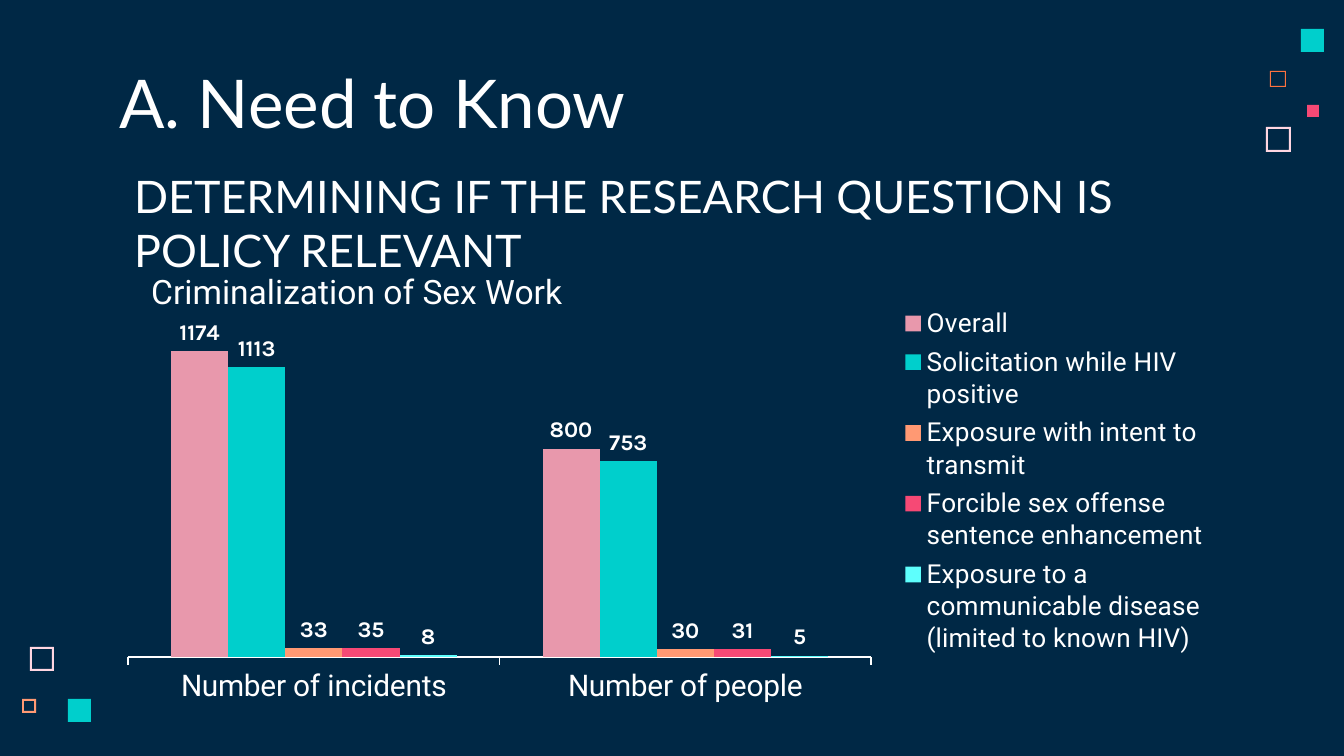
from dataclasses import dataclass

from lxml.etree import SubElement
from pptx import Presentation
from pptx.chart.data import CategoryChartData
from pptx.dml.color import RGBColor as Rgb
from pptx.enum.chart import XL_CHART_TYPE as ChartType
from pptx.enum.chart import XL_LABEL_POSITION as LabelPosition
from pptx.enum.chart import XL_LEGEND_POSITION as LegendPosition
from pptx.enum.chart import XL_TICK_MARK as TickMark
from pptx.enum.shapes import MSO_SHAPE as Shape
from pptx.enum.text import MSO_ANCHOR as Anchor
from pptx.enum.text import MSO_AUTO_SIZE as AutoSize
from pptx.enum.text import PP_ALIGN as Align
from pptx.oxml.ns import qn
from pptx.util import Pt

PX = 914400 / 134.4


@dataclass(frozen=True)
class Theme:
    navy: Rgb = Rgb.from_string("002845")
    white: Rgb = Rgb.from_string("FFFFFF")
    blush: Rgb = Rgb.from_string("FFD6E1")
    orange: Rgb = Rgb.from_string("FC723F")
    teal: Rgb = Rgb.from_string("00CFCC")
    peach: Rgb = Rgb.from_string("FF9973")
    pink: Rgb = Rgb.from_string("F64975")
    rose: Rgb = Rgb.from_string("E898AC")
    aqua: Rgb = Rgb.from_string("5EFFFD")
    title_size: int = 36
    subtitle_size: int = 24
    heading_size: int = 18
    axis_size: int = 16
    legend_size: int = 14
    label_size: int = 12


theme = Theme()


def write_text(box, bounds, words, name, size, anchor=Anchor.TOP):
    box.left, box.top, box.width, box.height = [round(n * PX) for n in bounds]
    frame = box.text_frame
    frame.word_wrap = True
    frame.auto_size = AutoSize.NONE
    frame.vertical_anchor = anchor
    frame.margin_left = frame.margin_right = Pt(7.2)
    frame.margin_top = frame.margin_bottom = Pt(7.2)
    para = frame.paragraphs[0]
    para.alignment = Align.LEFT
    span = para.add_run()
    span.text = words
    span.font.name = name
    span.font.size = Pt(size)
    span.font.color.rgb = theme.white


def place_in_chart(element, index, **fractions):
    """Give a plot area or legend a fixed place, in fractions of the chart."""
    for old in element.findall(qn("c:layout")):
        element.remove(old)
    layout = SubElement(element, qn("c:layout"))
    element.insert(index, layout)
    manual = SubElement(layout, qn("c:manualLayout"))
    if element.tag == qn("c:plotArea"):
        SubElement(manual, qn("c:layoutTarget"), val="inner")
    for mode in ("xMode", "yMode"):
        SubElement(manual, qn(f"c:{mode}"), val="edge")
    for key, value in fractions.items():
        SubElement(manual, qn(f"c:{key}"), val=str(value))


deck = Presentation()
deck.slide_width = round(1344 * PX)
deck.slide_height = round(756 * PX)
page = deck.slides.add_slide(deck.slide_layouts[5])
page.background.fill.solid()
page.background.fill.fore_color.rgb = theme.navy

# Corner squares: left, top, side, frame thickness (0 is solid), colour
squares = [
    (1266, 127, 25, 2, theme.blush),
    (1270, 71, 16, 1, theme.orange),
    (1301, 29, 23, 0, theme.teal),
    (22, 699, 14, 2, theme.peach),
    (1307, 105, 12, 0, theme.pink),
    (30, 647, 24, 2, theme.blush),
    (68, 699, 23, 0, theme.teal),
]
for left, top, side, thickness, color in squares:
    kind = Shape.FRAME if thickness else Shape.RECTANGLE
    square = page.shapes.add_shape(
        kind, *[round(n * PX) for n in (left, top, side, side)])
    if thickness:
        square.adjustments[0] = thickness / side
    square.shadow.inherit = False
    square.fill.solid()
    square.fill.fore_color.rgb = color
    square.line.fill.background()

write_text(page.shapes.title, (106, 48, 1133, 85), "A. Need to Know",
           "Lato", theme.title_size)
write_text(page.shapes.add_textbox(0, 0, 0, 0), (121, 187, 1117, 71),
           "DETERMINING IF THE RESEARCH QUESTION IS POLICY RELEVANT",
           "Lato", theme.subtitle_size, Anchor.MIDDLE)
write_text(page.shapes.add_textbox(0, 0, 0, 0), (138, 257, 1007, 75),
           "Criminalization of Sex Work", "Roboto", theme.heading_size)

charges = [
    ("Overall", (1174, 800), theme.rose),
    ("Solicitation while HIV positive", (1113, 753), theme.teal),
    ("Exposure with intent to transmit", (33, 30), theme.peach),
    ("Forcible sex offense sentence enhancement", (35, 31), theme.pink),
    ("Exposure to a communicable disease (limited to known HIV)", (8, 5),
     theme.aqua),
]
chart_data = CategoryChartData()
chart_data.categories = ["Number of incidents", "Number of people"]
for name, values, color in charges:
    chart_data.add_series(name, values)
chart = page.shapes.add_chart(
    ChartType.COLUMN_CLUSTERED,
    *[round(n * PX) for n in (106, 284, 1109, 429)], chart_data).chart
chart.has_title = False
chart.has_legend = True
chart.legend.position = LegendPosition.RIGHT
chart.legend.include_in_layout = False

category_axis = chart.category_axis
category_axis.major_tick_mark = TickMark.OUTSIDE
category_axis.format.line.color.rgb = theme.white
category_axis.format.line.width = Pt(0.75)
value_axis = chart.value_axis
value_axis.visible = False
value_axis.has_major_gridlines = False
value_axis.minimum_scale = 0
value_axis.maximum_scale = 1400

plot = chart.plots[0]
plot.gap_width = 150
plot.overlap = 0
plot.vary_by_categories = False
fonts = [
    (chart.font, "Arial", theme.heading_size),
    (category_axis.tick_labels.font, "Roboto", theme.axis_size),
    (chart.legend.font, "Roboto", theme.legend_size),
]
for series, (name, values, color) in zip(plot.series, charges):
    series.format.fill.solid()
    series.format.fill.fore_color.rgb = color
    labels = series.data_labels
    labels.show_value = True
    labels.position = LabelPosition.OUTSIDE_END
    labels.font.bold = True
    fonts.append((labels.font, "Karla", theme.label_size))
for font, name, size in fonts:
    font.name = name
    font.size = Pt(size)
    font.color.rgb = theme.white

plot_area = chart.element.find(f".//{qn('c:plotArea')}")
legend = chart.element.find(f".//{qn('c:legend')}")
place_in_chart(plot_area, 0, x=0.02, y=0.02, w=0.67, h=0.85)
place_in_chart(legend, 1, x=0.71, y=0.04, w=0.29, h=0.84)

deck.save("out.pptx")
